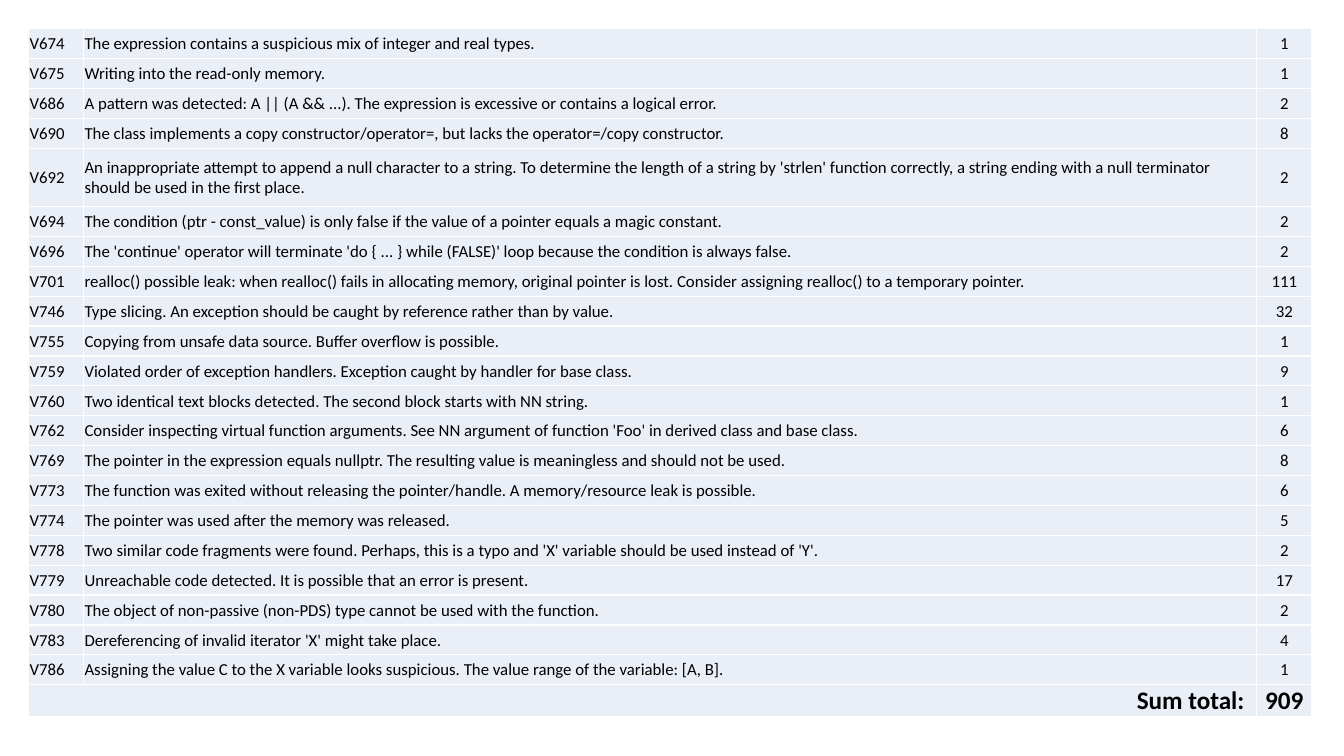
import pptx
import pptx.dml.color
import pptx.enum.text
import pptx.oxml
import pptx.oxml.ns
import pptx.util
from pptx.util import Pt

DIAGNOSTICS = [
    ("V674", "The expression contains a suspicious mix of integer and real types.", 1),
    ("V675", "Writing into the read-only memory.", 1),
    ("V686", "A pattern was detected: A || (A && ...). The expression is excessive or contains a logical error.", 2),
    ("V690", "The class implements a copy constructor/operator=, but lacks the operator=/copy constructor.", 8),
    ("V692", "An inappropriate attempt to append a null character to a string. To determine the length of a string "
             "by 'strlen' function correctly, a string ending with a null terminator should be used in the first "
             "place.", 2),
    ("V694", "The condition (ptr - const_value) is only false if the value of a pointer equals a magic constant.", 2),
    ("V696", "The 'continue' operator will terminate 'do { ... } while (FALSE)' loop because the condition is "
             "always false.", 2),
    ("V701", "realloc() possible leak: when realloc() fails in allocating memory, original pointer is lost. "
             "Consider assigning realloc() to a temporary pointer.", 111),
    ("V746", "Type slicing. An exception should be caught by reference rather than by value.", 32),
    ("V755", "Copying from unsafe data source. Buffer overflow is possible.", 1),
    ("V759", "Violated order of exception handlers. Exception caught by handler for base class.", 9),
    ("V760", "Two identical text blocks detected. The second block starts with NN string.", 1),
    ("V762", "Consider inspecting virtual function arguments. See NN argument of function 'Foo' in derived class "
             "and base class.", 6),
    ("V769", "The pointer in the expression equals nullptr. The resulting value is meaningless and should not be "
             "used.", 8),
    ("V773", "The function was exited without releasing the pointer/handle. A memory/resource leak is possible.", 6),
    ("V774", "The pointer was used after the memory was released.", 5),
    ("V778", "Two similar code fragments were found. Perhaps, this is a typo and 'X' variable should be used "
             "instead of 'Y'.", 2),
    ("V779", "Unreachable code detected. It is possible that an error is present.", 17),
    ("V780", "The object of non-passive (non-PDS) type cannot be used with the function.", 2),
    ("V783", "Dereferencing of invalid iterator 'X' might take place.", 4),
    ("V786", "Assigning the value C to the X variable looks suspicious. The value range of the variable: [A, B].", 1),
]
TOTAL_LABEL = "Sum total:"
TOTAL_COUNT = 909

FONT = "Calibri"
BLACK = pptx.dml.color.RGBColor(0x00, 0x00, 0x00)
WHITE = pptx.dml.color.RGBColor(0xFF, 0xFF, 0xFF)
PALE_BLUE = pptx.dml.color.RGBColor(0xEA, 0xEF, 0xF7)

LEFT, TOP = 20.4, 20.4
COLUMN_WIDTHS = [39.3, 838.1, 39.3]
ROW_HEIGHT, TWO_LINE_HEIGHT = 21.36, 41.76
TWO_LINE_CODES = {"V692"}
INSET = 0.72
TOTAL_LABEL_INSET = 8.9

ALIGN = pptx.enum.text.PP_ALIGN
COLUMN_ALIGNMENTS = [ALIGN.LEFT, ALIGN.LEFT, ALIGN.CENTER]


def add_borders(cell):
    properties = cell._tc.get_or_add_tcPr()
    for position, side in enumerate(("lnL", "lnR", "lnT", "lnB")):
        properties.insert(position, pptx.oxml.parse_xml(
            f'<a:{side} {pptx.oxml.ns.nsdecls("a")} w="{Pt(1)}"><a:solidFill>'
            f'<a:srgbClr val="{WHITE}"/></a:solidFill></a:{side}>'))


def format_cell(cell):
    cell.fill.solid()
    cell.fill.fore_color.rgb = PALE_BLUE
    add_borders(cell)
    cell.vertical_anchor = pptx.enum.text.MSO_ANCHOR.MIDDLE
    cell.margin_left = cell.margin_right = cell.margin_top = Pt(INSET)
    cell.margin_bottom = Pt(0)


def write_cell(cell, text, alignment, size=12, bold=False):
    paragraph = cell.text_frame.paragraphs[0]
    paragraph.alignment = alignment
    run = paragraph.add_run()
    run.text = str(text)
    run.font.name = FONT
    run.font.size = Pt(size)
    run.font.bold = bold
    run.font.color.rgb = BLACK


def main():
    presentation = pptx.Presentation()
    presentation.slide_width, presentation.slide_height = Pt(960), Pt(540)
    slide = presentation.slides.add_slide(presentation.slide_layouts[6])

    heights = [TWO_LINE_HEIGHT if code in TWO_LINE_CODES else ROW_HEIGHT for code, _, _ in DIAGNOSTICS]
    heights.append(ROW_HEIGHT)
    table = slide.shapes.add_table(len(heights), len(COLUMN_WIDTHS), Pt(LEFT), Pt(TOP),
                                   Pt(sum(COLUMN_WIDTHS)), Pt(sum(heights))).table
    table.first_row = table.horz_banding = False
    for column, width in zip(table.columns, COLUMN_WIDTHS):
        column.width = Pt(width)
    for row, height in zip(table.rows, heights):
        row.height = Pt(height)
    for cell in table.iter_cells():
        format_cell(cell)

    for row, diagnostic in zip(table.rows, DIAGNOSTICS):
        for cell, text, alignment in zip(row.cells, diagnostic, COLUMN_ALIGNMENTS):
            write_cell(cell, text, alignment)

    total_row = len(DIAGNOSTICS)
    label_cell = table.cell(total_row, 0)
    label_cell.merge(table.cell(total_row, 1))
    label_cell.margin_right = Pt(TOTAL_LABEL_INSET)
    write_cell(label_cell, TOTAL_LABEL, ALIGN.RIGHT, 18, True)
    write_cell(table.cell(total_row, 2), TOTAL_COUNT, ALIGN.CENTER, 18, True)

    presentation.save("out.pptx")


if __name__ == "__main__":
    main()
